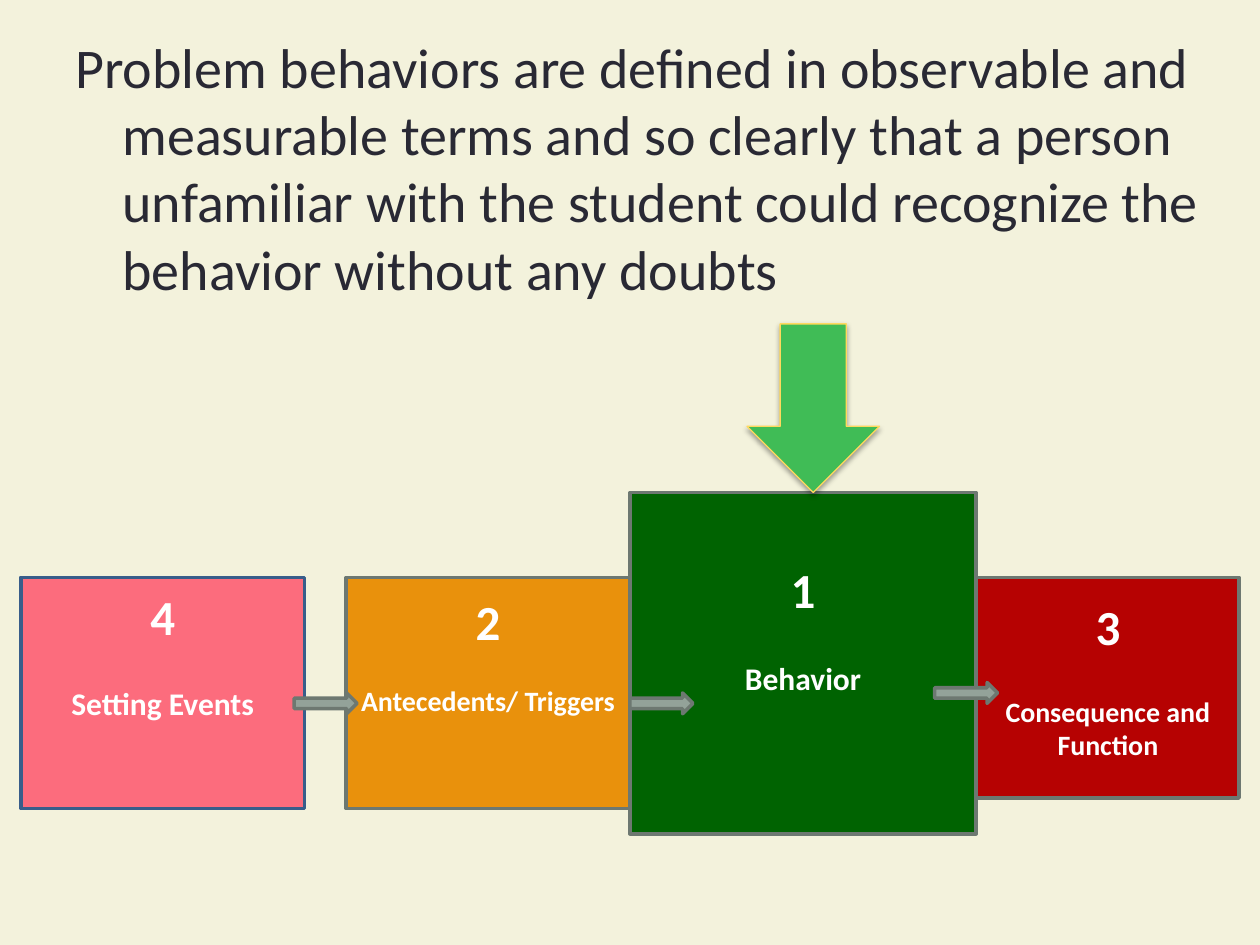
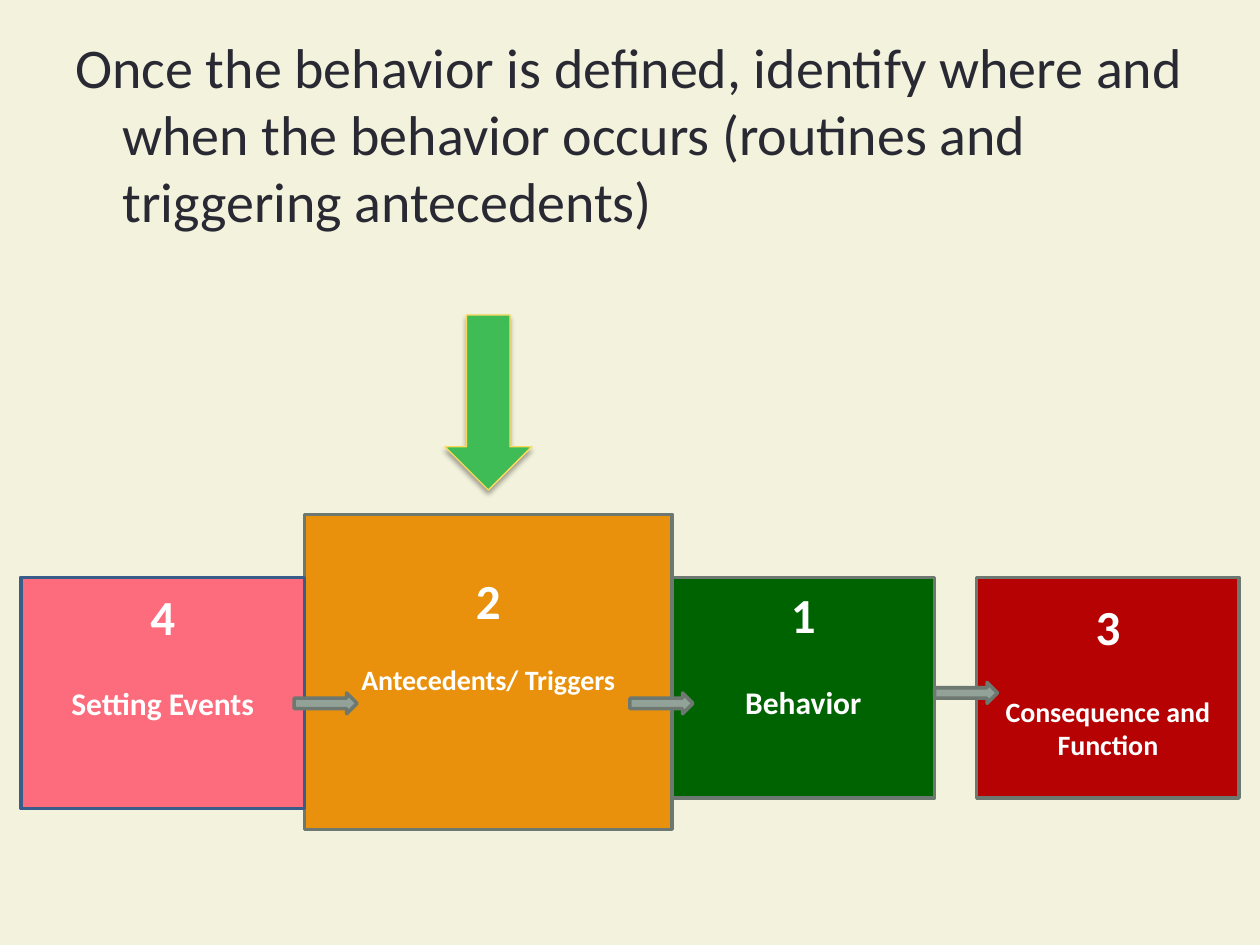
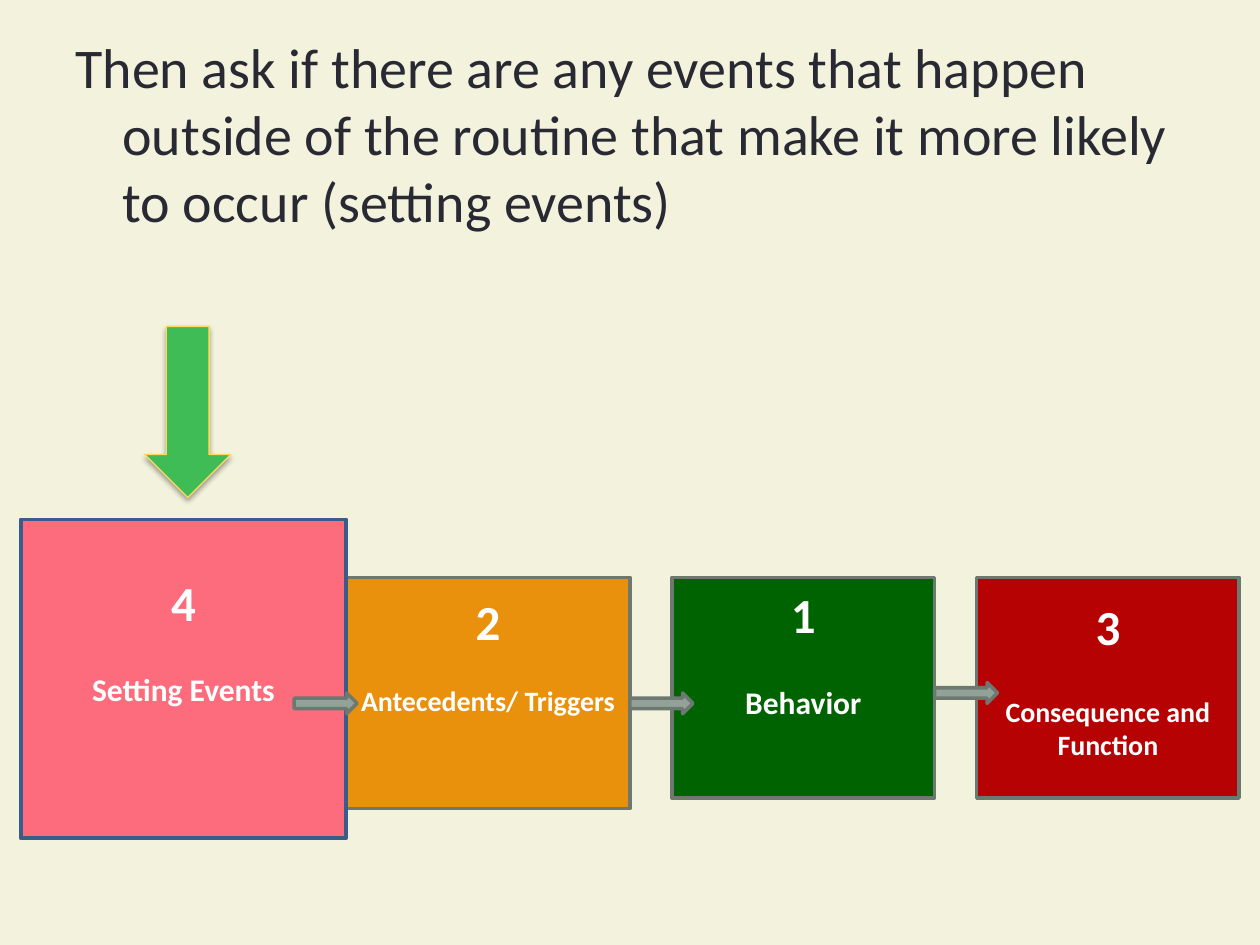
"""Three slides that walk through the steps of a behavior pathway."""
from lxml import etree
from pptx import Presentation
from pptx.dml.color import RGBColor
from pptx.enum.shapes import MSO_SHAPE
from pptx.enum.text import MSO_ANCHOR, PP_ALIGN
from pptx.oxml.ns import qn
from pptx.util import Cm, Pt

RECT, RIGHT, DOWN = MSO_SHAPE.RECTANGLE, MSO_SHAPE.RIGHT_ARROW, MSO_SHAPE.DOWN_ARROW
MIDDLE, CENTER = MSO_ANCHOR.MIDDLE, PP_ALIGN.CENTER

CREAM = RGBColor(0xF3, 0xF2, 0xDC)
INK = RGBColor(0x29, 0x29, 0x34)
WHITE = RGBColor(0xFF, 0xFF, 0xFF)
PINK = RGBColor(0xFC, 0x6C, 0x7D)
ORANGE = RGBColor(0xE9, 0x91, 0x0C)
GREEN = RGBColor(0x00, 0x63, 0x01)
RED = RGBColor(0xB6, 0x02, 0x02)
NAVY = RGBColor(0x38, 0x5D, 0x8A)
SLATE = RGBColor(0x6D, 0x78, 0x71)
SAGE = RGBColor(0x93, 0xA2, 0x99)
LIME = RGBColor(0x40, 0xBC, 0x56)
GOLD = RGBColor(0xFF, 0xD9, 0x5E)

FONT = "Calibri"
ROW_TOP = 11.64

# "lift" raises the text above the middle, "gap" parts number and label (points),
# "shift" moves the number left (cm).
STEPS = {
    "antecedents": dict(number="2", label="Antecedents/ Triggers", size=16, fill=ORANGE,
                        line=SLATE, at=(6.98, ROW_TOP, 5.72, 4.66), gap=18.7, lift=44, shift=0),
    "behavior": dict(number="1", label="Behavior", size=18, fill=GREEN,
                     line=SLATE, at=(13.55, ROW_TOP, 5.29, 4.45), gap=23, lift=40, shift=0.48),
    "consequence": dict(number="3", label="Consequence and Function", size=16, fill=RED,
                        line=SLATE, at=(19.69, ROW_TOP, 5.29, 4.45), gap=22, lift=10, shift=0),
    "setting": dict(number="4", label="Setting Events", size=18, fill=PINK,
                    line=NAVY, at=(0.42, ROW_TOP, 5.72, 4.66), gap=22, lift=44, shift=0),
}
LINKS = [(5.93, 13.97), (12.7, 13.97), (18.84, 13.76)]

SLIDES = [
    dict(text="Problem behaviors are defined in observable and measurable terms and so clearly "
              "that a person unfamiliar with the student could recognize the behavior "
              "without any doubts",
         width=23.22, focus="behavior", at=(12.7, 9.93, 6.98, 6.88),
         pointer=(15.06, 6.53, 2.67, 3.4)),
    dict(text="Once the behavior is defined, identify where and when the behavior occurs "
              "(routines and triggering antecedents)",
         width=22.86, focus="antecedents", at=(6.14, 10.37, 7.41, 6.35),
         pointer=(8.97, 6.35, 1.75, 3.53)),
    dict(text="Then ask if there are any events that happen outside of the routine that make it "
              "more likely to occur (setting events)",
         width=22.86, focus="setting", at=(0.42, 10.47, 6.56, 6.43),
         pointer=(2.92, 6.58, 1.73, 3.45)),
]


def style_run(p, text, size, color, bold=False):
    r = p.add_run()
    r.text = text
    for name, value in dict(name=FONT, size=Pt(size), bold=bold).items():
        setattr(r.font, name, value)
    r.font.color.rgb = color


def add_block(s, kind, at, fill, line, weight=2):
    sp = s.shapes.add_shape(kind, *map(Cm, at))
    sp.shadow.inherit = False
    sp.fill.solid()
    sp.fill.fore_color.rgb = fill
    sp.line.color.rgb = line
    sp.line.width = Pt(weight)
    return sp


def add_statement(s, text, width):
    tf = s.shapes.add_textbox(Cm(1.27), Cm(0.53), Cm(width), Cm(17.7)).text_frame
    tf.word_wrap = True
    p = tf.paragraphs[0]
    pPr = p._p.get_or_add_pPr()
    pPr.set("marL", str(Cm(0.95)))
    pPr.set("indent", str(-Cm(0.95)))
    style_run(p, text, 32, INK)


def add_step(s, step, at):
    tf = add_block(s, RECT, at, step["fill"], step["line"]).text_frame
    settings = dict(word_wrap=True, vertical_anchor=MIDDLE, margin_top=0,
                    margin_bottom=Pt(step["lift"]))
    for name, value in settings.items():
        setattr(tf, name, value)
    number, label = tf.paragraphs[0], tf.add_paragraph()
    number.alignment = label.alignment = CENTER
    if step["shift"]:
        number._p.get_or_add_pPr().set("indent", str(-Cm(step["shift"])))
    label.space_before = Pt(step["gap"])
    style_run(number, step["number"], 28, WHITE, True)
    style_run(label, step["label"], step["size"], WHITE, True)


def add_pointer(s, at):
    sp = add_block(s, DOWN, at, LIME, GOLD, 0.75)
    effects = sp._element.spPr.find(qn("a:effectLst"))
    shadow = etree.SubElement(effects, qn("a:outerShdw"), blurRad=str(Pt(3.1)),
                              dist=str(Pt(1.8)), dir="5400000", rotWithShape="0")
    color = etree.SubElement(shadow, qn("a:srgbClr"), val="000000")
    etree.SubElement(color, qn("a:alpha"), val="35000")


def main():
    prs = Presentation()
    prs.slide_width, prs.slide_height = Cm(25.4), Cm(19.05)
    for content in SLIDES:
        s = prs.slides.add_slide(prs.slide_layouts[6])
        s.background.fill.solid()
        s.background.fill.fore_color.rgb = CREAM
        add_statement(s, content["text"], content["width"])
        for name, step in STEPS.items():
            add_step(s, step, content["at"] if name == content["focus"] else step["at"])
        for left, top in LINKS:
            add_block(s, RIGHT, (left, top, 1.27, 0.42), SAGE, SLATE)
        add_pointer(s, content["pointer"])
    prs.save("out.pptx")


if __name__ == "__main__":
    main()
